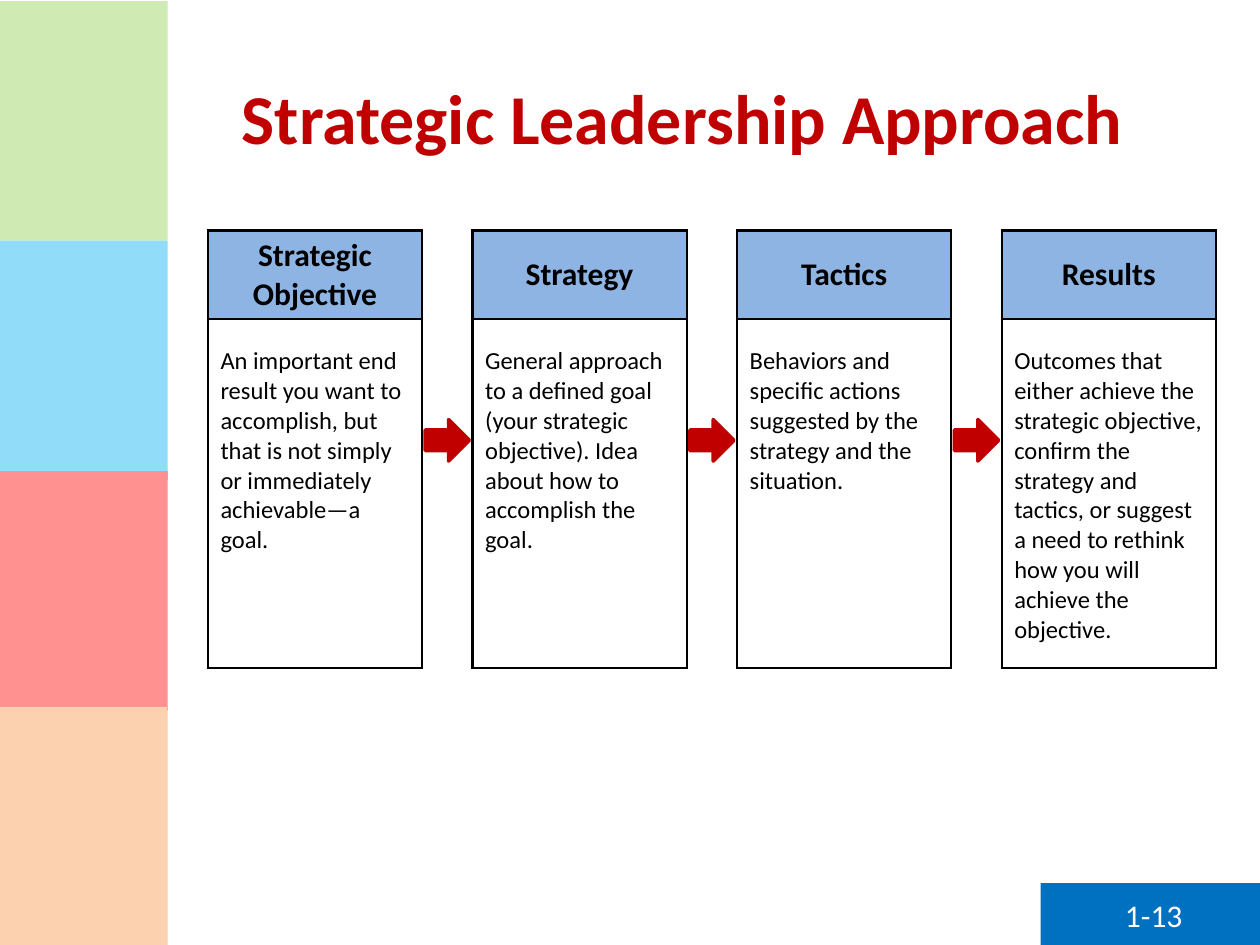
from lxml import etree
from pptx import Presentation
from pptx.dml.color import RGBColor
from pptx.enum.shapes import MSO_SHAPE
from pptx.enum.text import MSO_ANCHOR, PP_ALIGN
from pptx.oxml.ns import qn
from pptx.util import Inches, Pt

RECT, ARROW = MSO_SHAPE.RECTANGLE, MSO_SHAPE.RIGHT_ARROW
TOP, MIDDLE = MSO_ANCHOR.TOP, MSO_ANCHOR.MIDDLE
LEFT, CENTER = PP_ALIGN.LEFT, PP_ALIGN.CENTER

TITLE = "Strategic Leadership Approach"
PAGE = "1-13"
STEPS = [
    ("Strategic\nObjective",
     "An important end result you want to accomplish, but that is not simply "
     "or immediately achievable—a goal."),
    ("Strategy",
     "General approach to a defined goal (your strategic objective). Idea "
     "about how to accomplish the goal."),
    ("Tactics",
     "Behaviors and specific actions suggested by the strategy and the "
     "situation."),
    ("Results",
     "Outcomes that either achieve the strategic objective, confirm the "
     "strategy and tactics, or suggest a need to rethink how you will achieve "
     "the objective."),
]

THEME = dict(
    font="Calibri", title=40, head=18, body=14, page=18, border=1.5,
    accent="C00000", head_fill="8EB4E3", ink="000000", white="FFFFFF",
    page_fill="0070C0", veil_opacity=57,
)
W, H = 10, 7.5
SIDEBAR_W = 1.33
BANDS = [(0.01, "92D050"), (1.91, "00B0F0"), (3.74, "FF0000"), (5.61, "F79646")]
BAND_H = 1.9
TABLE_X, TABLE_Y = 1.65, 1.83
STEP_W, GAP_W = 1.7, 0.4
ROWS = (0.7, 2.77)
ARROW_W, ARROW_H, ARROW_Y = 0.35, 0.33, 3.33


def box(x, y, w, h):
    return [Inches(v) for v in (x, y, w, h)]


def add_shape(s, kind, at, color, line=None):
    sp = s.shapes.add_shape(kind, *box(*at))
    sp.shadow.inherit = False
    sp.fill.solid()
    sp.fill.fore_color.rgb = RGBColor.from_string(color)
    if line:
        sp.line.color.rgb = RGBColor.from_string(color)
        sp.line.width = Pt(line)
    else:
        sp.line.fill.background()
    return sp


def write(tf, text, size, color=THEME["ink"], bold=False, align=LEFT):
    tf.word_wrap = True
    p = tf.paragraphs[0]
    p.text = text
    p.alignment = align
    for r in p.runs:
        r.font.name = THEME["font"]
        r.font.size = Pt(size)
        r.font.bold = bold
        r.font.color.rgb = RGBColor.from_string(color)


def add_text(s, at, text, size, anchor=TOP, **fmt):
    tf = s.shapes.add_textbox(*box(*at)).text_frame
    tf.vertical_anchor = anchor
    write(tf, text, size, **fmt)


def set_borders(cell, drawn):
    """Draw the sides named in drawn (letters of LRTB) and clear the others."""
    tc_pr = cell._tc.get_or_add_tcPr()
    for side in "LRTB":
        ln = etree.SubElement(tc_pr, qn(f"a:ln{side}"), w=str(Pt(THEME["border"])))
        if side in drawn:
            fill = etree.SubElement(ln, qn("a:solidFill"))
            etree.SubElement(fill, qn("a:srgbClr"), val=THEME["ink"])
        else:
            etree.SubElement(ln, qn("a:noFill"))


def add_sidebar(s):
    for y, color in BANDS:
        add_shape(s, RECT, (0, y, SIDEBAR_W, BAND_H), color)
    add_shape(s, RECT, (8.26, 7.01, 1.75, 0.5), THEME["page_fill"])
    veil = add_shape(s, RECT, (0, 0, SIDEBAR_W, H), THEME["white"])
    color = veil._element.spPr.find(qn("a:solidFill"))[0]
    etree.SubElement(color, qn("a:alpha"), val=str(THEME["veil_opacity"] * 1000))


def add_steps(s):
    n_cols = 2 * len(STEPS) - 1
    width = len(STEPS) * STEP_W + (len(STEPS) - 1) * GAP_W
    table = s.shapes.add_table(
        2, n_cols, *box(TABLE_X, TABLE_Y, width, sum(ROWS))).table
    table.first_row = table.horz_banding = False
    for row, h in zip(table.rows, ROWS):
        row.height = Inches(h)
    for c, col in enumerate(table.columns):
        is_gap = c % 2
        col.width = Inches(GAP_W if is_gap else STEP_W)
        for r in range(2):
            cell = table.cell(r, c)
            set_borders(cell, "LR" if is_gap else "LRTB")
            cell.fill.background()
    for i, (head, body) in enumerate(STEPS):
        top, bottom = table.cell(0, 2 * i), table.cell(1, 2 * i)
        top.fill.solid()
        top.fill.fore_color.rgb = RGBColor.from_string(THEME["head_fill"])
        top.vertical_anchor = MIDDLE
        write(top.text_frame, head, THEME["head"], bold=True, align=CENTER)
        bottom.margin_top = Inches(0.22)
        write(bottom.text_frame, body, THEME["body"])


def add_arrows(s):
    for i in range(len(STEPS) - 1):
        gap_x = TABLE_X + STEP_W + i * (STEP_W + GAP_W)
        x = gap_x + (GAP_W - ARROW_W) / 2
        add_shape(s, ARROW, (x, ARROW_Y, ARROW_W, ARROW_H), THEME["accent"], line=2)


def main():
    prs = Presentation()
    prs.slide_width, prs.slide_height = Inches(W), Inches(H)
    s = prs.slides.add_slide(prs.slide_layouts[6])
    add_sidebar(s)
    add_text(s, (SIDEBAR_W, 0.3, 8.17, 1.25), TITLE, THEME["title"], anchor=MIDDLE,
             color=THEME["accent"], bold=True, align=CENTER)
    add_text(s, (8.83, 7.06, 0.75, 0.4), PAGE, THEME["page"], color=THEME["white"])
    add_steps(s)
    add_arrows(s)
    prs.save("out.pptx")


if __name__ == "__main__":
    main()
